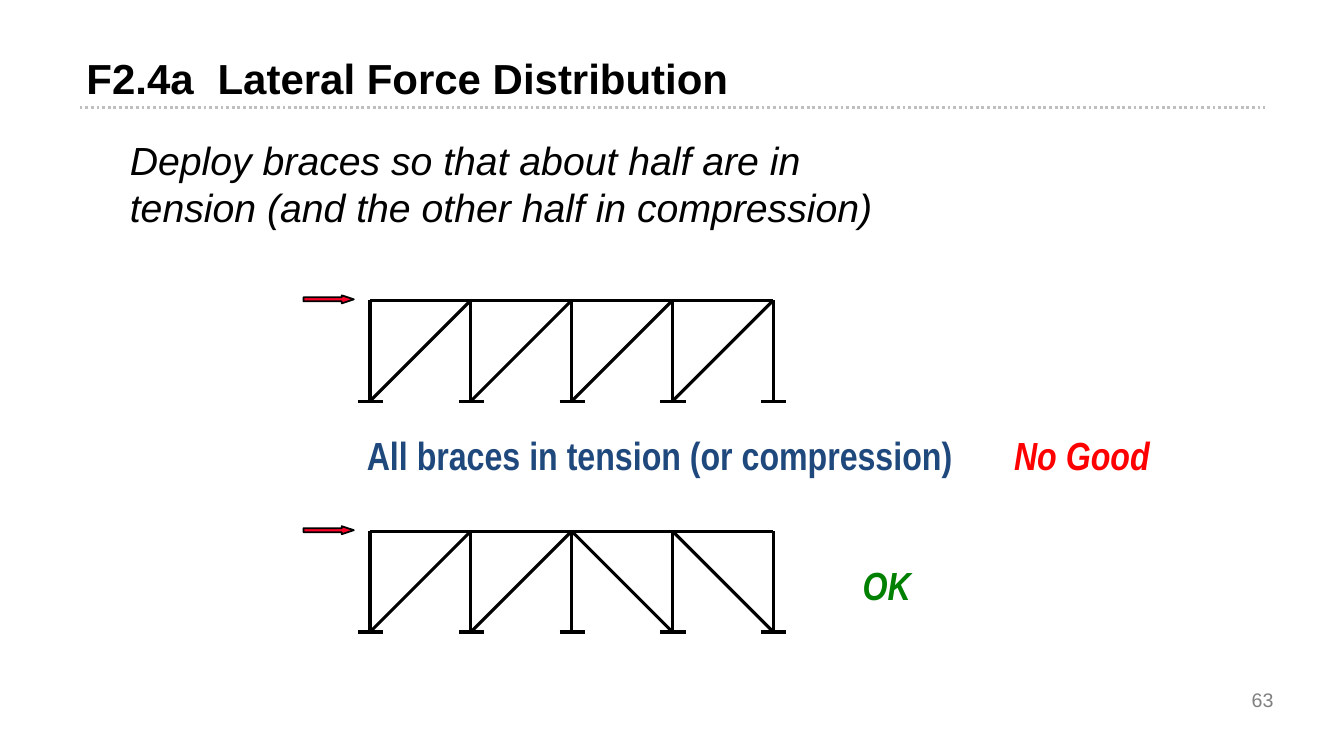
"""Builds the slide on lateral force distribution in braced frames."""
from lxml.etree import SubElement
from pptx import Presentation
from pptx.dml.color import RGBColor
from pptx.enum.dml import MSO_LINE
from pptx.enum.shapes import MSO_CONNECTOR, MSO_SHAPE
from pptx.enum.text import MSO_ANCHOR, PP_ALIGN
from pptx.oxml.ns import qn
from pptx.util import Pt

PX = 9144
BLACK = "000000"
color = RGBColor.from_string

deck = Presentation()
deck.slide_width, deck.slide_height = 1333 * PX, 750 * PX
slide = deck.slides.add_slide(deck.slide_layouts[6])
shapes = slide.shapes


def draw_line(x1, y1, x2, y2, tone=BLACK, width=2.25):
    line = shapes.add_connector(
        MSO_CONNECTOR.STRAIGHT, x1 * PX, y1 * PX, x2 * PX, y2 * PX)
    SubElement(line._element.spPr, qn("a:effectLst"))
    line.line.color.rgb = color(tone)
    line.line.width = Pt(width)
    return line


rule = draw_line(79, 107, 1255, 107, "BFBFBF", 2)
rule.line.dash_style = MSO_LINE.ROUND_DOT

LEFT, MID, RIGHT = PP_ALIGN.LEFT, PP_ALIGN.CENTER, PP_ALIGN.RIGHT
labels = [
    ("F2.4a\tLateral Force Distribution", 76, 47, 1197, 68,
     "Arial", 30, BLACK, True, False, LEFT),
    ("Deploy braces so that about half are in tension "
     "(and the other half in compression)", 119, 130, 783, 104,
     "Arial", 28, BLACK, False, True, LEFT),
    ("All braces in tension (or compression)", 354, 423, 630, 57,
     "Arial Narrow", 28, "1F497D", True, False, LEFT),
    ("No Good", 996, 423, 174, 57,
     "Arial Narrow", 28, "FF0000", True, True, LEFT),
    ("OK", 792, 552, 175, 57,
     "Arial Narrow", 28, "008000", True, True, MID),
    ("63", 962, 674, 311, 40,
     "Arial", 14, "7F7F7F", False, False, RIGHT),
]
for text, x, y, w, h, face, size, tone, bold, slant, align in labels:
    box = shapes.add_textbox(x * PX, y * PX, w * PX, h * PX)
    frame = box.text_frame
    frame.word_wrap = True
    frame.text = text
    para = frame.paragraphs[0]
    para.alignment = align
    if "\t" in text:
        tabs = SubElement(para._p.get_or_add_pPr(), qn("a:tabLst"))
        SubElement(tabs, qn("a:tab"), pos=str(130 * PX), algn="l")
    if align == RIGHT:
        frame.vertical_anchor = MSO_ANCHOR.MIDDLE
    for run in para.runs:
        font = run.font
        font.name, font.size = face, Pt(size)
        font.bold, font.italic = bold, slant
        font.color.rgb = color(tone)

BAY, START, BAYS = 100, 367, 4
END = START + BAYS * BAY
for top, rising in [(298, 4), (527, 2)]:
    base = top + BAY
    draw_line(START, top, END, top)
    for x in range(START, END + 1, BAY):
        draw_line(x, top, x, base)
        draw_line(x - 12, base, x + 13, base)
    for bay in range(BAYS):
        x = START + bay * BAY
        if bay < rising:
            draw_line(x, base, x + BAY, top)
        else:
            draw_line(x, top, x + BAY, base)
    force = shapes.add_shape(
        MSO_SHAPE.RIGHT_ARROW, 301 * PX, (top - 5) * PX, 50 * PX, 8 * PX)
    force.shadow.inherit = False
    force.adjustments[0], force.adjustments[1] = 0.5, 1.5
    force.fill.solid()
    force.fill.fore_color.rgb = color("FC0128")
    force.line.color.rgb = color(BLACK)
    force.line.width = Pt(1.25)

deck.save("out.pptx")
